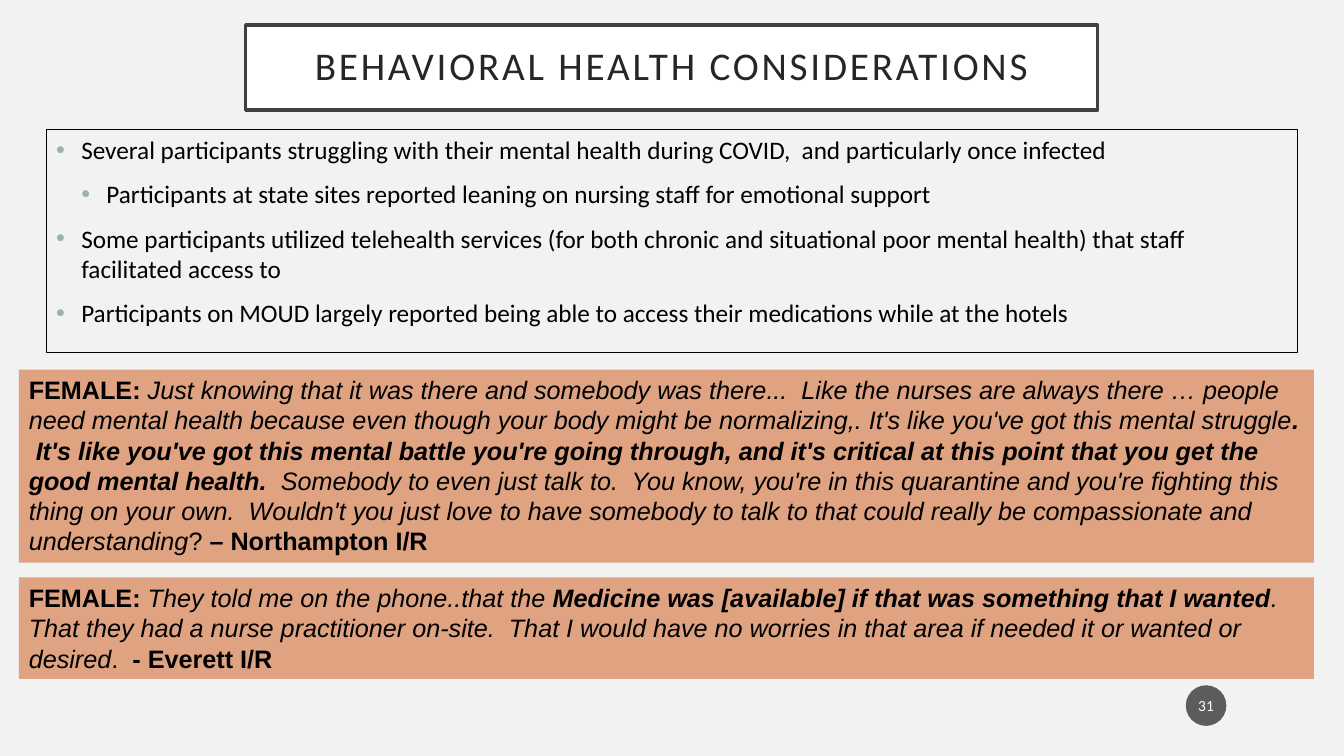
from lxml import etree
from pptx import Presentation
from pptx.dml.color import RGBColor
from pptx.enum.shapes import MSO_SHAPE
from pptx.enum.text import MSO_ANCHOR, PP_ALIGN
from pptx.oxml.ns import qn
from pptx.util import Pt

RECTANGLE, OVAL = MSO_SHAPE.RECTANGLE, MSO_SHAPE.OVAL
TOP, MIDDLE = MSO_ANCHOR.TOP, MSO_ANCHOR.MIDDLE
LEFT, CENTER = PP_ALIGN.LEFT, PP_ALIGN.CENTER

BACKGROUND = RGBColor(0xF2, 0xF2, 0xF2)
WHITE = RGBColor(0xFF, 0xFF, 0xFF)
BLACK = RGBColor(0x00, 0x00, 0x00)
FRAME = RGBColor(0x40, 0x40, 0x40)
TITLE_INK = RGBColor(0x26, 0x26, 0x26)
BULLET = RGBColor(0x9B, 0xAF, 0xB5)
QUOTE_FILL = RGBColor(0xE0, 0xA3, 0x82)
BADGE = RGBColor(0x1D, 0x1D, 0x1D)

INDENT = 18
PLAIN, BOLD, ITALIC, BOLD_ITALIC = (False, False), (True, False), (False, True), (True, True)

FINDINGS = [
    (1, "Several participants struggling with their mental health during COVID,  and particularly once infected"),
    (2, "Participants at state sites reported leaning on nursing staff for emotional support"),
    (1, "Some participants utilized telehealth services (for both chronic and situational poor mental health) "
        "that staff facilitated access to"),
    (1, "Participants on MOUD largely reported being able to access their medications while at the hotels"),
]

NORTHAMPTON = [
    [("FEMALE: ", BOLD),
     ("Just knowing that it was there and somebody was there...  Like the nurses are always there … people "
      "need mental health because even though your body might be normalizing,. "
      "It's like you've got this mental struggle", ITALIC),
     (".  It's like you've got this mental battle you're going through, and it's critical at this point "
      "that you get the good mental health. ", BOLD_ITALIC),
     (" Somebody to even just talk to.  You know, you're in this quarantine and you're fighting this thing "
      "on your own.  Wouldn't you just love to have somebody to talk to that could really be "
      "compassionate and", ITALIC)],
    [("understanding", ITALIC), ("? ", PLAIN), ("– Northampton I/R", BOLD)],
]

EVERETT = [
    [("FEMALE: ", BOLD),
     ("They told me on the phone..that the ", ITALIC),
     ("Medicine was [available] if that was something that I wanted", BOLD_ITALIC),
     (".  That they had a nurse practitioner on-site.  That I would have no worries in that area "
      "if needed it or wanted or", ITALIC)],
    [("desired", ITALIC), (".  ", PLAIN), ("- Everett I/R", BOLD)],
]


def add_panel(slide, kind, box, fill=None, line=None, line_width=0, anchor=TOP, insets=(7.2, 3.6)):
    panel = slide.shapes.add_shape(kind, *map(Pt, box))
    panel.shadow.inherit = False
    if fill is None:
        panel.fill.background()
    else:
        panel.fill.solid()
        panel.fill.fore_color.rgb = fill
    if line is None:
        panel.line.fill.background()
    else:
        panel.line.color.rgb = line
        panel.line.width = Pt(line_width)
    frame = panel.text_frame
    frame.word_wrap = True
    frame.vertical_anchor = anchor
    frame.margin_left = frame.margin_right = Pt(insets[0])
    frame.margin_top = frame.margin_bottom = Pt(insets[1])
    return panel


def set_text_style(paragraph, font_name, size, color, align=LEFT):
    paragraph.alignment = align
    paragraph.font.name = font_name
    paragraph.font.size = Pt(size)
    paragraph.font.color.rgb = color


def paragraph_at(frame, index):
    return frame.paragraphs[0] if index == 0 else frame.add_paragraph()


def add_title(slide, title):
    panel = add_panel(slide, RECTANGLE, (175.5, 18, 608.5, 60.5), WHITE, FRAME, 2.5, MIDDLE, (14.4, 14.4))
    paragraph = panel.text_frame.paragraphs[0]
    run = paragraph.add_run()
    run.text = title
    run.font._element.set("spc", "200")
    paragraph.line_spacing = 0.9
    set_text_style(paragraph, "Calibri", 28, TITLE_INK, CENTER)


def add_bullet(paragraph, level):
    properties = paragraph._p.get_or_add_pPr()
    properties.set("marL", str(Pt(INDENT * level)))
    properties.set("indent", str(-Pt(INDENT)))
    color = etree.SubElement(properties, qn("a:buClr"))
    etree.SubElement(color, qn("a:srgbClr"), val=str(BULLET))
    etree.SubElement(properties, qn("a:buFont"), typeface="Arial")
    etree.SubElement(properties, qn("a:buChar"), char="•")


def add_findings(slide, findings):
    panel = add_panel(slide, RECTANGLE, (33, 92.5, 894, 159.5), line=BLACK, line_width=0.75)
    for index, (level, finding) in enumerate(findings):
        paragraph = paragraph_at(panel.text_frame, index)
        paragraph.text = finding
        paragraph.level = level - 1
        add_bullet(paragraph, level)
        if index:
            paragraph.space_before = Pt(10)
        set_text_style(paragraph, "Calibri", 18, BLACK)


def add_quote(slide, top, height, quote):
    panel = add_panel(slide, RECTANGLE, (13.5, top, 925, height), QUOTE_FILL)
    for index, phrases in enumerate(quote):
        paragraph = paragraph_at(panel.text_frame, index)
        for phrase, (bold, italic) in phrases:
            run = paragraph.add_run()
            run.text = phrase
            run.font.bold = bold
            run.font.italic = italic
        set_text_style(paragraph, "Arial", 18, BLACK)


def add_page_number(slide, number):
    badge = add_panel(slide, OVAL, (847, 489.5, 29, 29), BADGE, anchor=MIDDLE, insets=(1.4, 3.6))
    color = badge.fill._xPr.find(qn("a:solidFill"))[0]
    etree.SubElement(color, qn("a:alpha"), val="70000")
    paragraph = badge.text_frame.paragraphs[0]
    paragraph.text = number
    set_text_style(paragraph, "Calibri", 11, WHITE, CENTER)


def main():
    deck = Presentation()
    deck.slide_width, deck.slide_height = Pt(960), Pt(540)
    slide = deck.slides.add_slide(deck.slide_layouts[6])
    slide.background.fill.solid()
    slide.background.fill.fore_color.rgb = BACKGROUND
    add_title(slide, "BEHAVIORAL HEALTH CONSIDERATIONS")
    add_findings(slide, FINDINGS)
    add_quote(slide, 264, 138, NORTHAMPTON)
    add_quote(slide, 412.5, 72.5, EVERETT)
    add_page_number(slide, "31")
    deck.save("out.pptx")


if __name__ == "__main__":
    main()
